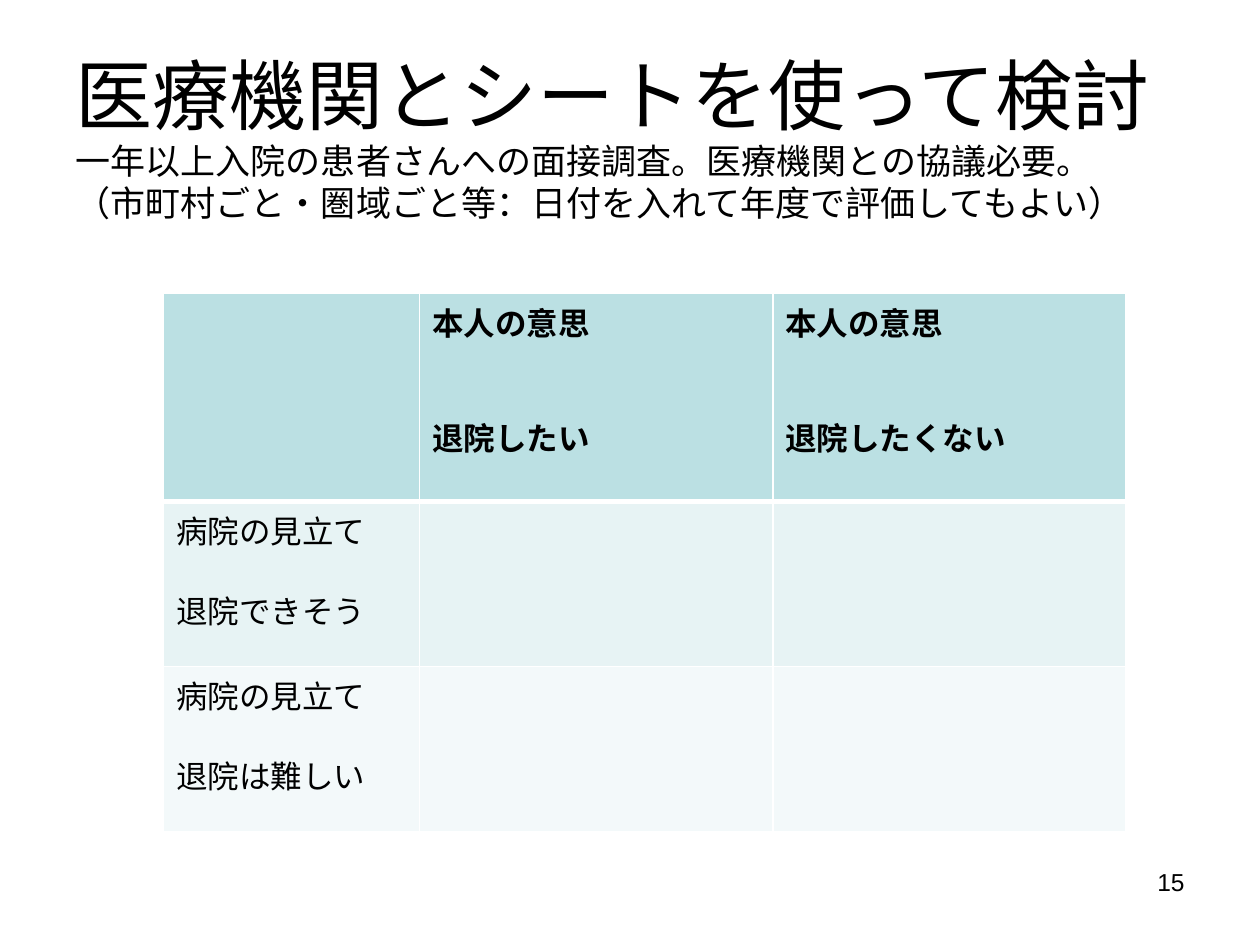
from lxml.etree import SubElement
from pptx import Presentation
from pptx.dml.color import RGBColor
from pptx.enum.text import MSO_ANCHOR, PP_ALIGN
from pptx.oxml.ns import qn
from pptx.util import Cm, Pt

THEME = {
    "font": "Arial",
    "text": RGBColor.from_string("000000"),
    "border": "FFFFFF",
    "rows": ["BBE0E3", "E7F3F4", "F3F9FA"],
    "title": Pt(44),
    "subtitle": Pt(20),
    "table": Pt(18),
    "number": Pt(14),
}


def write_paragraph(paragraph, text, size, bold=False, **paragraph_format):
    lines = text.split("\n")
    for index, line in enumerate(lines):
        if index:
            paragraph.add_line_break()
        run = paragraph.add_run()
        run.text = line
        font_format = {"name": THEME["font"], "size": size, "bold": bold}
        for name, value in font_format.items():
            setattr(run.font, name, value)
        run.font.color.rgb = THEME["text"]
        east_asian = SubElement(run.font._element, qn("a:ea"))
        east_asian.set("typeface", THEME["font"])
    for name, value in paragraph_format.items():
        setattr(paragraph, name, value)


def add_border(cell, side, points):
    line = SubElement(cell._tc.get_or_add_tcPr(), qn(f"a:ln{side}"), w=str(Pt(points)))
    fill = SubElement(line, qn("a:solidFill"))
    SubElement(fill, qn("a:srgbClr"), val=THEME["border"])


presentation = Presentation()
presentation.slide_width, presentation.slide_height = Cm(25.4), Cm(19.05)
slide = presentation.slides.add_slide(presentation.slide_layouts[5])

# Title with its two explanatory lines
title = slide.shapes.title
title_place = {"left": Cm(1.27), "top": Cm(0.76), "width": Cm(22.86), "height": Cm(2.03)}
for name, value in title_place.items():
    setattr(title, name, value)
title_frame = title.text_frame
frame_format = {"word_wrap": True, "vertical_anchor": MSO_ANCHOR.TOP, "margin_top": Cm(0.18)}
for name, value in frame_format.items():
    setattr(title_frame, name, value)
title_format = {"alignment": PP_ALIGN.LEFT, "space_before": Pt(0)}
write_paragraph(title_frame.paragraphs[0], "医療機関とシートを使って検討",
                THEME["title"], line_spacing=Pt(53), **title_format)
write_paragraph(title_frame.add_paragraph(),
                "一年以上入院の患者さんへの面接調査。医療機関との協議必要。\n"
                "（市町村ごと・圏域ごと等：日付を入れて年度で評価してもよい）",
                THEME["subtitle"], line_spacing=Pt(24), **title_format)

# Matrix of the patient's wish against the hospital's view
matrix = [
    [[], ["本人の意思", "退院したい"], ["本人の意思", "退院したくない"]],
    [["病院の見立て", "退院できそう"], [], []],
    [["病院の見立て", "退院は難しい"], [], []],
]
column_widths = [Cm(5.16), Cm(7.12), Cm(7.12)]
row_heights = [Cm(4.19), Cm(3.33), Cm(3.33)]
table = slide.shapes.add_table(3, 3, Cm(3.3), Cm(5.92),
                               sum(column_widths), sum(row_heights)).table
for column, width in zip(table.columns, column_widths):
    column.width = width
for row, height in zip(table.rows, row_heights):
    row.height = height

for row_index, row_texts in enumerate(matrix):
    is_header = row_index == 0
    gap = Pt(42) if is_header else Pt(22)
    borders = {"L": 1, "R": 1, "T": 3 if row_index == 1 else 1, "B": 3 if is_header else 1}
    for column_index, texts in enumerate(row_texts):
        cell = table.cell(row_index, column_index)
        for side, points in borders.items():
            add_border(cell, side, points)
        cell.fill.solid()
        cell.fill.fore_color.rgb = RGBColor.from_string(THEME["rows"][row_index])
        for index, text in enumerate(texts):
            frame = cell.text_frame
            paragraph = frame.add_paragraph() if index else frame.paragraphs[0]
            write_paragraph(paragraph, text, THEME["table"], is_header,
                            line_spacing=Pt(24), space_before=gap if index else Pt(0))

# Slide number
number = slide.shapes.add_textbox(Cm(18.21), Cm(17.35), Cm(5.92), Cm(1.32))
number.text_frame.word_wrap = True
write_paragraph(number.text_frame.paragraphs[0], "15", THEME["number"],
                alignment=PP_ALIGN.RIGHT)

presentation.save("out.pptx")
